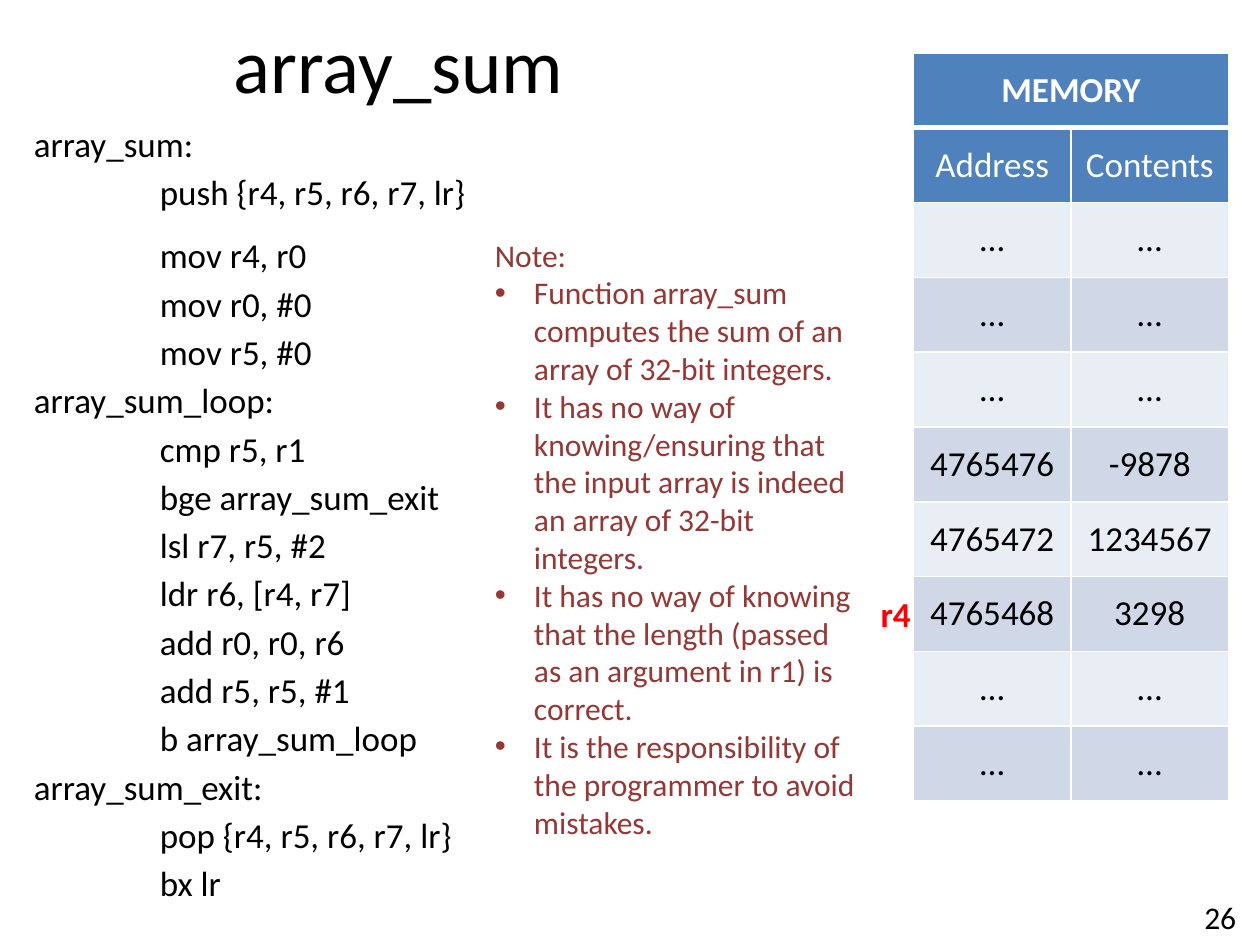
from lxml import etree
from pptx import Presentation
from pptx.dml.color import RGBColor
from pptx.enum.text import MSO_ANCHOR, PP_ALIGN
from pptx.oxml.ns import qn
from pptx.util import Inches, Pt

LEFT, CENTER, RIGHT = PP_ALIGN.LEFT, PP_ALIGN.CENTER, PP_ALIGN.RIGHT
TOP, MIDDLE = MSO_ANCHOR.TOP, MSO_ANCHOR.MIDDLE

BLACK = RGBColor(0x00, 0x00, 0x00)
WHITE = RGBColor(0xFF, 0xFF, 0xFF)
RED = RGBColor(0xFF, 0x00, 0x00)
MAROON = RGBColor(0x95, 0x37, 0x35)
HEADER_BLUE = RGBColor(0x4F, 0x81, 0xBD)
BANDS = (RGBColor(0xE9, 0xED, 0xF4), RGBColor(0xD0, 0xD8, 0xE8))

FONT = "Calibri"
LINE_GAP = 3.6
BLOCK_GAP = 12.2

ROUTINE = [
    ("array_sum:", [["push {r4, r5, r6, r7, lr}"],
                    ["mov r4, r0", "mov r0, #0", "mov r5, #0"]]),
    ("array_sum_loop:", [["cmp r5, r1", "bge array_sum_exit", "lsl r7, r5, #2",
                          "ldr r6, [r4, r7]", "add r0, r0, r6",
                          "add r5, r5, #1", "b array_sum_loop"]]),
    ("array_sum_exit:", [["pop {r4, r5, r6, r7, lr}", "bx lr"]]),
]
NOTES = [
    "Function array_sum computes the sum of an array of 32-bit integers.",
    "It has no way of knowing/ensuring that the input array is indeed "
    "an array of 32-bit integers.",
    "It has no way of knowing that the length (passed as an argument in r1) is correct.",
    "It is the responsibility of the programmer to avoid mistakes.",
]
GAP_ROW = ("…", "…")
MEMORY = [
    ("MEMORY", ""), ("Address", "Contents"), GAP_ROW, GAP_ROW, GAP_ROW,
    ("4765476", "-9878"), ("4765472", "1234567"), ("4765468", "3298"),
    GAP_ROW, GAP_ROW,
]
HEADER_ROWS = 2


def write(frame, text, size=20, color=BLACK, bold=False, align=LEFT,
          before=0, indent=0, bullet=None):
    """Write one paragraph, filling the frame's empty first one if it can."""
    first = frame.paragraphs[0]
    paragraph = frame.add_paragraph() if first.runs else first
    paragraph.alignment = align
    paragraph.space_before = Pt(before)
    run = paragraph.add_run()
    run.text = text
    run.font.name, run.font.size, run.font.bold = FONT, Pt(size), bold
    run.font.color.rgb = color
    if indent:
        properties = paragraph._p.get_or_add_pPr()
        properties.set("marL", str(Inches(indent)))
        if bullet:
            properties.set("indent", str(-Inches(indent)))
            etree.SubElement(properties, qn("a:buFont"), typeface="Arial")
            etree.SubElement(properties, qn("a:buChar"), char=bullet)


def add_frame(slide, box, anchor=TOP, wrap=True):
    """Add a text box and return its text frame."""
    frame = slide.shapes.add_textbox(*map(Inches, box)).text_frame
    frame.word_wrap = wrap
    frame.vertical_anchor = anchor
    return frame


def add_code(slide, box):
    """List the routine, with instructions indented under their labels."""
    frame = add_frame(slide, box)
    for label_index, (label, blocks) in enumerate(ROUTINE):
        write(frame, label, before=LINE_GAP if label_index else 0)
        for block_index, block in enumerate(blocks):
            for line_index, instruction in enumerate(block):
                opens_block = block_index and not line_index
                write(frame, instruction, indent=1,
                      before=BLOCK_GAP if opens_block else LINE_GAP)


def add_notes(slide, box):
    """Place the bulleted remarks about the routine."""
    frame = add_frame(slide, box)
    write(frame, "Note:", size=18, color=MAROON)
    for note in NOTES:
        write(frame, note, size=18, color=MAROON, indent=0.31, bullet="•")


def set_borders(cell, bottom_width):
    """Give a cell white borders."""
    properties = cell._tc.get_or_add_tcPr()
    widths = {"a:lnL": 1, "a:lnR": 1, "a:lnT": 1, "a:lnB": bottom_width}
    for position, (side, width) in enumerate(widths.items()):
        line = etree.Element(qn(side), w=str(Pt(width)))
        fill = etree.SubElement(line, qn("a:solidFill"))
        etree.SubElement(fill, qn("a:srgbClr"), val=str(WHITE))
        properties.insert(position, line)


def add_memory(slide, box):
    """Place the memory table with its title, headings and banded rows."""
    left, top, width, height = map(Inches, box)
    table = slide.shapes.add_table(len(MEMORY), 2, left, top, width, height).table
    for row_index, values in enumerate(MEMORY):
        table.rows[row_index].height = height // len(MEMORY)
        is_header = row_index < HEADER_ROWS
        for column_index, value in enumerate(values):
            cell = table.cell(row_index, column_index)
            cell.vertical_anchor = MIDDLE
            cell.fill.solid()
            cell.fill.fore_color.rgb = (
                HEADER_BLUE if is_header else BANDS[row_index % 2])
            set_borders(cell, 1 if row_index else 3)
            if value:
                write(cell.text_frame, value, align=CENTER, bold=row_index == 0,
                      color=WHITE if is_header else BLACK)
    table.cell(0, 0).merge(table.cell(0, 1))


def main():
    """Build and save the slide."""
    deck = Presentation()
    deck.slide_width, deck.slide_height = Inches(10), Inches(7.5)
    slide = deck.slides.add_slide(deck.slide_layouts[6])
    write(add_frame(slide, (0.5, 0.08, 5.33, 0.83), anchor=MIDDLE),
          "array_sum", size=44, align=CENTER)
    add_code(slide, (0.17, 0.92, 6.17, 5.5))
    write(add_frame(slide, (7.58, 7.08, 2.33, 0.4)), "26", size=18, align=RIGHT)
    write(add_frame(slide, (6.89, 4.65, 0.44, 0.44), wrap=False),
          "r4", color=RED, bold=True)
    add_notes(slide, (3.83, 1.82, 3.06, 5.25))
    add_memory(slide, (7.25, 0.42, 2.5, 5.94))
    deck.save("out.pptx")


if __name__ == "__main__":
    main()
